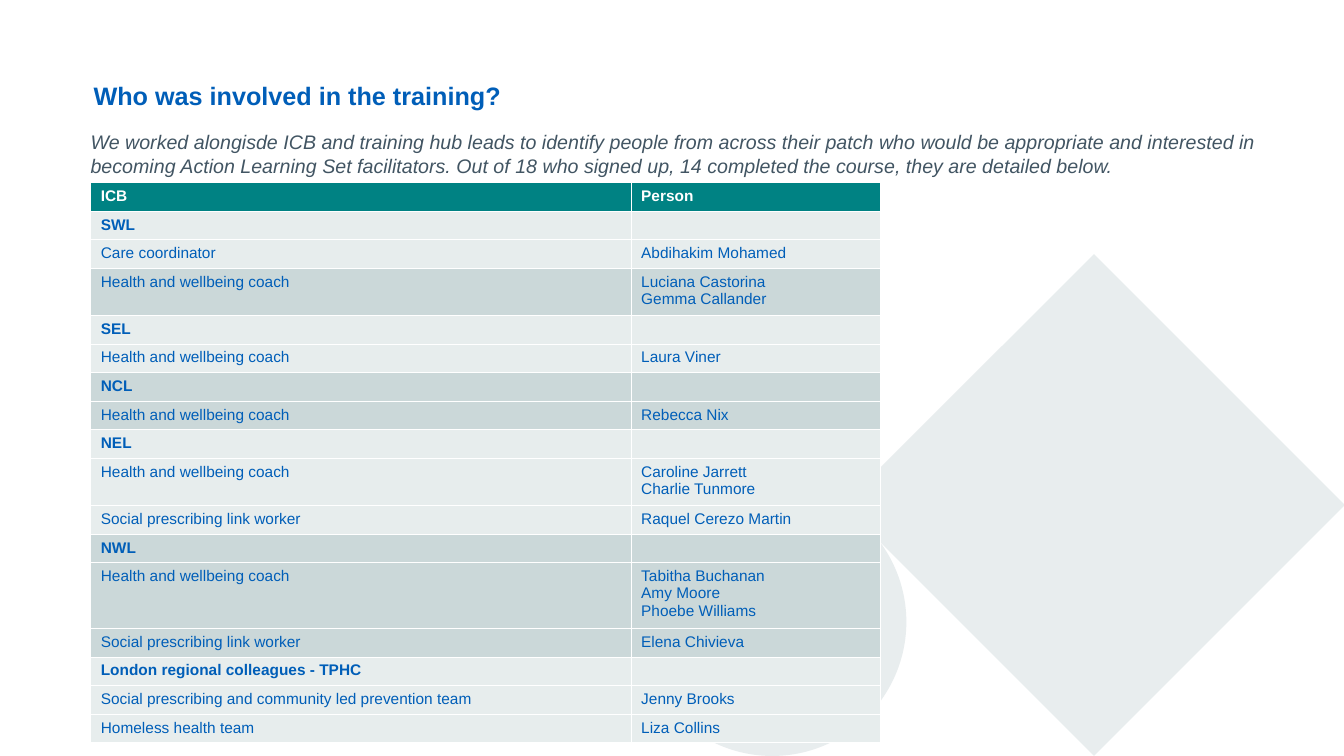
import pptx
import pptx.dml.color
import pptx.enum.shapes
import pptx.oxml.ns
import pptx.util
from dataclasses import dataclass
from lxml import etree
from pptx.util import Inches


@dataclass(frozen=True)
class Theme:
    font: str = "Arial"
    blue: str = "005EB8"
    slate: str = "425563"
    teal: str = "008283"
    white: str = "FFFFFF"
    shape: str = "E8EDEE"
    light: str = "E7EDED"
    dark: str = "CBD8D9"
    title: int = 18
    intro: int = 14
    cell: int = 11
    rule: float = 0.75


THEME = Theme()
TITLE = "Who was involved in the training?"
INTRO = (
    "We worked alongisde ICB and training hub leads to identify people "
    "from across their patch who would be appropriate and interested in "
    "becoming Action Learning Set facilitators. Out of 18 who signed up, "
    "14 completed the course, they are detailed below."
)
COACH = "Health and wellbeing coach"
LINK = "Social prescribing link worker"
ROWS = [
    ("ICB", ["Person"], THEME.teal),
    ("SWL", [], THEME.light),
    ("Care coordinator", ["Abdihakim Mohamed"], THEME.light),
    (COACH, ["Luciana Castorina", "Gemma Callander"], THEME.dark),
    ("SEL", [], THEME.light),
    (COACH, ["Laura Viner"], THEME.light),
    ("NCL", [], THEME.dark),
    (COACH, ["Rebecca Nix"], THEME.dark),
    ("NEL", [], THEME.light),
    (COACH, ["Caroline Jarrett", "Charlie Tunmore"], THEME.light),
    (LINK, ["Raquel Cerezo Martin"], THEME.light),
    ("NWL", [], THEME.dark),
    (COACH, ["Tabitha Buchanan", "Amy Moore", "Phoebe Williams"], THEME.dark),
    (LINK, ["Elena Chivieva"], THEME.dark),
    ("London regional colleagues - TPHC", [], THEME.light),
    ("Social prescribing and community led prevention team", ["Jenny Brooks"], THEME.light),
    ("Homeless health team", ["Liza Collins"], THEME.light),
]


def paint(fill, tint):
    fill.solid()
    fill.fore_color.rgb = pptx.dml.color.RGBColor.from_string(tint)


def style(font, tint, look):
    for key, value in look.items():
        setattr(font, key, value)
    font.color.rgb = pptx.dml.color.RGBColor.from_string(tint)


def look(size, bold=False, italic=False):
    return {
        "name": THEME.font,
        "size": pptx.util.Pt(size),
        "bold": bold,
        "italic": italic,
    }


def add_shape(slide, kind, box, turn=0):
    shape = slide.shapes.add_shape(kind, *map(Inches, box))
    shape.rotation = turn
    shape.shadow.inherit = False
    paint(shape.fill, THEME.shape)
    shape.line.fill.background()


def add_text(slide, text, box, tint, form):
    frame = slide.shapes.add_textbox(*map(Inches, box)).text_frame
    frame.word_wrap = True
    run = frame.paragraphs[0].add_run()
    run.text = text
    style(run.font, tint, form)


def add_edges(cell):
    props = cell._tc.get_or_add_tcPr()
    name = pptx.oxml.ns.qn
    for side in ("lnL", "lnR", "lnT", "lnB"):
        width = str(int(pptx.util.Pt(THEME.rule)))
        line = etree.SubElement(props, name("a:" + side), w=width)
        fill = etree.SubElement(line, name("a:solidFill"))
        etree.SubElement(fill, name("a:srgbClr"), val=THEME.white)


def fill_cell(cell, lines, tint, back, bold):
    add_edges(cell)
    paint(cell.fill, back)
    frame = cell.text_frame
    if not lines:
        tag = pptx.oxml.ns.qn("a:endParaRPr")
        etree.SubElement(frame.paragraphs[0]._p, tag, sz=str(THEME.cell * 100))
    for index, line in enumerate(lines):
        para = frame.add_paragraph() if index else frame.paragraphs[0]
        run = para.add_run()
        run.text = line
        style(run.font, tint, look(THEME.cell, bold))


def add_table(slide):
    box = map(Inches, (0.9, 1.81, 7.83, 5.29))
    table = slide.shapes.add_table(len(ROWS), 2, *box).table
    table.horz_banding = False
    for column, width in zip(table.columns, (5.36, 2.47)):
        column.width = Inches(width)
    for index, (role, people, back) in enumerate(ROWS):
        extra = max(len(people) - 1, 0)
        table.rows[index].height = Inches(0.27 + 0.17 * extra)
        head = index == 0
        tint = THEME.white if head else THEME.blue
        bold = head or not people
        for spot, lines in enumerate(([role], people)):
            fill_cell(table.cell(index, spot), lines, tint, back, bold)


def main():
    deck = pptx.Presentation()
    deck.slide_width = Inches(13.33)
    deck.slide_height = Inches(7.5)
    slide = deck.slides.add_slide(deck.slide_layouts[6])
    kinds = pptx.enum.shapes.MSO_SHAPE
    add_shape(slide, kinds.OVAL, (6.33, 4.84, 2.66, 2.66))
    add_shape(slide, kinds.RECTANGLE, (9.09, 3.25, 3.52, 3.52), 45)
    add_text(slide, INTRO, (0.8, 1.24, 11.78, 3.94), THEME.slate,
             look(THEME.intro, italic=True))
    add_text(slide, TITLE, (0.83, 0.75, 11.71, 0.8), THEME.blue,
             look(THEME.title, bold=True))
    add_table(slide)
    deck.save("out.pptx")


if __name__ == "__main__":
    main()
